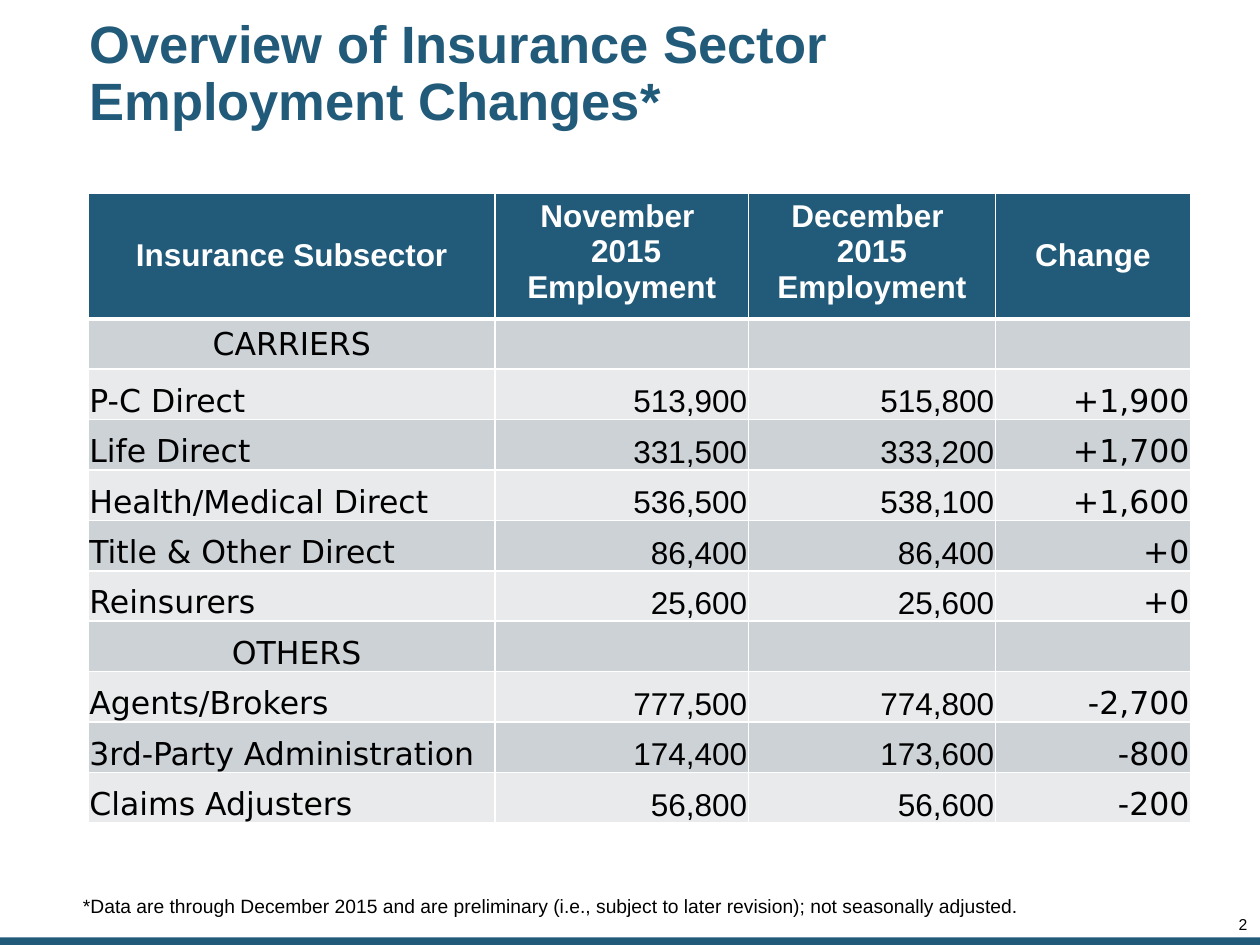
from typing import NamedTuple

from lxml import etree
from pptx import Presentation
from pptx.dml.color import RGBColor
from pptx.enum.shapes import MSO_SHAPE
from pptx.enum.text import MSO_ANCHOR, PP_ALIGN
from pptx.oxml.ns import qn
from pptx.util import Inches, Pt

RECT = MSO_SHAPE.RECTANGLE
TOP, MIDDLE, BOTTOM = MSO_ANCHOR.TOP, MSO_ANCHOR.MIDDLE, MSO_ANCHOR.BOTTOM
LEFT, CENTER, RIGHT = PP_ALIGN.LEFT, PP_ALIGN.CENTER, PP_ALIGN.RIGHT
SANS, WIDE = "Arial", "DejaVu Sans"
COLORS = {
    "blue": "225A7A",
    "dark": "CDD2D7",
    "light": "E8EAEC",
    "white": "FFFFFF",
    "black": "000000",
}


class Style(NamedTuple):
    size: float
    font: str = SANS
    color: str = "black"
    bold: bool = False
    align: PP_ALIGN = LEFT
    lead: float = 1.0


class Label(NamedTuple):
    text: str
    box: tuple
    style: Style
    inset: tuple
    anchor: MSO_ANCHOR = TOP


class Head(NamedTuple):
    text: str
    width: float
    anchor: MSO_ANCHOR


class Row(NamedTuple):
    name: str
    values: tuple = ("", "", "")
    anchor: MSO_ANCHOR = BOTTOM


WIDE_PAD = (0.1, 0.05, 0.1, 0.05)
EVEN_PAD = (0.05, 0.05, 0.05, 0.05)
CELL_PAD = (0.01, 0.01, 0.01, 0)
NO_PAD = (0, 0, 0, 0)

LABELS = [
    Label("2", (9.41, 7.28, 0.49, 0.13), Style(9, align=RIGHT, lead=0.85), NO_PAD),
    Label("Overview of Insurance Sector Employment Changes*",
          (0.66, 0.25, 7.75, 0.69),
          Style(30, color="blue", bold=True, lead=0.9), EVEN_PAD, MIDDLE),
    Label("*Data are through December 2015 and are preliminary "
          "(i.e., subject to later revision); not seasonally adjusted.",
          (0.56, 7.05, 9.04, 0.28), Style(11), WIDE_PAD),
]

HEADS = [
    Head("Insurance Subsector", 3.23, MIDDLE),
    Head("November \n 2015\nEmployment", 2.01, TOP),
    Head("December \v2015\nEmployment", 1.96, TOP),
    Head("Change", 1.55, MIDDLE),
]

ROWS = [
    Row("CARRIERS", anchor=MIDDLE),
    Row("P-C Direct", ("513,900", "515,800", "+1,900")),
    Row("Life Direct", ("331,500", "333,200", "+1,700")),
    Row("Health/Medical Direct", ("536,500", "538,100", "+1,600")),
    Row("Title & Other Direct", ("86,400", "86,400", "+0")),
    Row("Reinsurers", ("25,600", "25,600", "+0")),
    Row(" OTHERS"),
    Row("Agents/Brokers", ("777,500", "774,800", "-2,700")),
    Row("3rd-Party Administration", ("174,400", "173,600", "-800")),
    Row("Claims Adjusters", ("56,800", "56,600", "-200")),
]

HEAD_STYLE = Style(18, color="white", bold=True, align=CENTER)
GROUP_STYLE = Style(18, WIDE, align=CENTER)
NAME_STYLE = Style(18, WIDE)
COUNT_STYLE = Style(18, align=RIGHT)
CHANGE_STYLE = Style(18, WIDE, align=RIGHT)


def shade(name: str) -> RGBColor:
    return RGBColor.from_string(COLORS[name])


def write(frame, text: str, style: Style) -> None:
    frame.text = text
    for para in frame.paragraphs:
        para.alignment = style.align
        para.line_spacing = style.lead
        font = para.font
        font.size = Pt(style.size)
        font.name = style.font
        font.bold = style.bold
        font.color.rgb = shade(style.color)


def pad(part, inset: tuple) -> None:
    (part.margin_left, part.margin_top,
     part.margin_right, part.margin_bottom) = map(Inches, inset)


def add_label(slide, label: Label) -> None:
    frame = slide.shapes.add_textbox(*map(Inches, label.box)).text_frame
    frame.word_wrap = True
    frame.vertical_anchor = label.anchor
    pad(frame, label.inset)
    write(frame, label.text, label.style)


def add_bar(slide) -> None:
    bar = slide.shapes.add_shape(RECT, *map(Inches, (0, 7.44, 10, 0.06)))
    bar.shadow.inherit = False
    bar.fill.solid()
    bar.fill.fore_color.rgb = shade("blue")
    bar.line.fill.background()


def add_edges(cell, top: float, base: float) -> None:
    props = cell._tc.get_or_add_tcPr()
    for side, width in (("L", 1), ("R", 1), ("T", top), ("B", base)):
        line = etree.SubElement(props, qn(f"a:ln{side}"), w=str(Pt(width)))
        fill = etree.SubElement(line, qn("a:solidFill"))
        etree.SubElement(fill, qn("a:srgbClr"), val=COLORS["white"])


def set_cell(cell, text: str, style: Style, fill: str, inset: tuple,
             anchor: MSO_ANCHOR, top: float = 1, base: float = 1) -> None:
    add_edges(cell, top, base)
    cell.fill.solid()
    cell.fill.fore_color.rgb = shade(fill)
    cell.vertical_anchor = anchor
    pad(cell, inset)
    write(cell.text_frame, text, style)


def add_grid(slide) -> None:
    box = map(Inches, (0.7, 1.53, 8.75, 5))
    table = slide.shapes.add_table(len(ROWS) + 1, len(HEADS), *box).table
    table.rows[0].height = Inches(1)
    for col, head in enumerate(HEADS):
        table.columns[col].width = Inches(head.width)
        set_cell(table.cell(0, col), head.text, HEAD_STYLE, "blue",
                 WIDE_PAD, head.anchor, base=3)
    for index, row in enumerate(ROWS, 1):
        table.rows[index].height = Inches(0.4)
        first = NAME_STYLE if any(row.values) else GROUP_STYLE
        styles = (first, COUNT_STYLE, COUNT_STYLE, CHANGE_STYLE)
        fill = "dark" if index % 2 else "light"
        top = 3 if index == 1 else 1
        for col, text in enumerate((row.name, *row.values)):
            set_cell(table.cell(index, col), text, styles[col], fill,
                     CELL_PAD, row.anchor, top)


def main() -> None:
    deck = Presentation()
    deck.slide_width, deck.slide_height = Inches(10), Inches(7.5)
    slide = deck.slides.add_slide(deck.slide_layouts[6])
    add_bar(slide)
    for label in LABELS:
        add_label(slide, label)
    add_grid(slide)
    deck.save("out.pptx")


if __name__ == "__main__":
    main()
